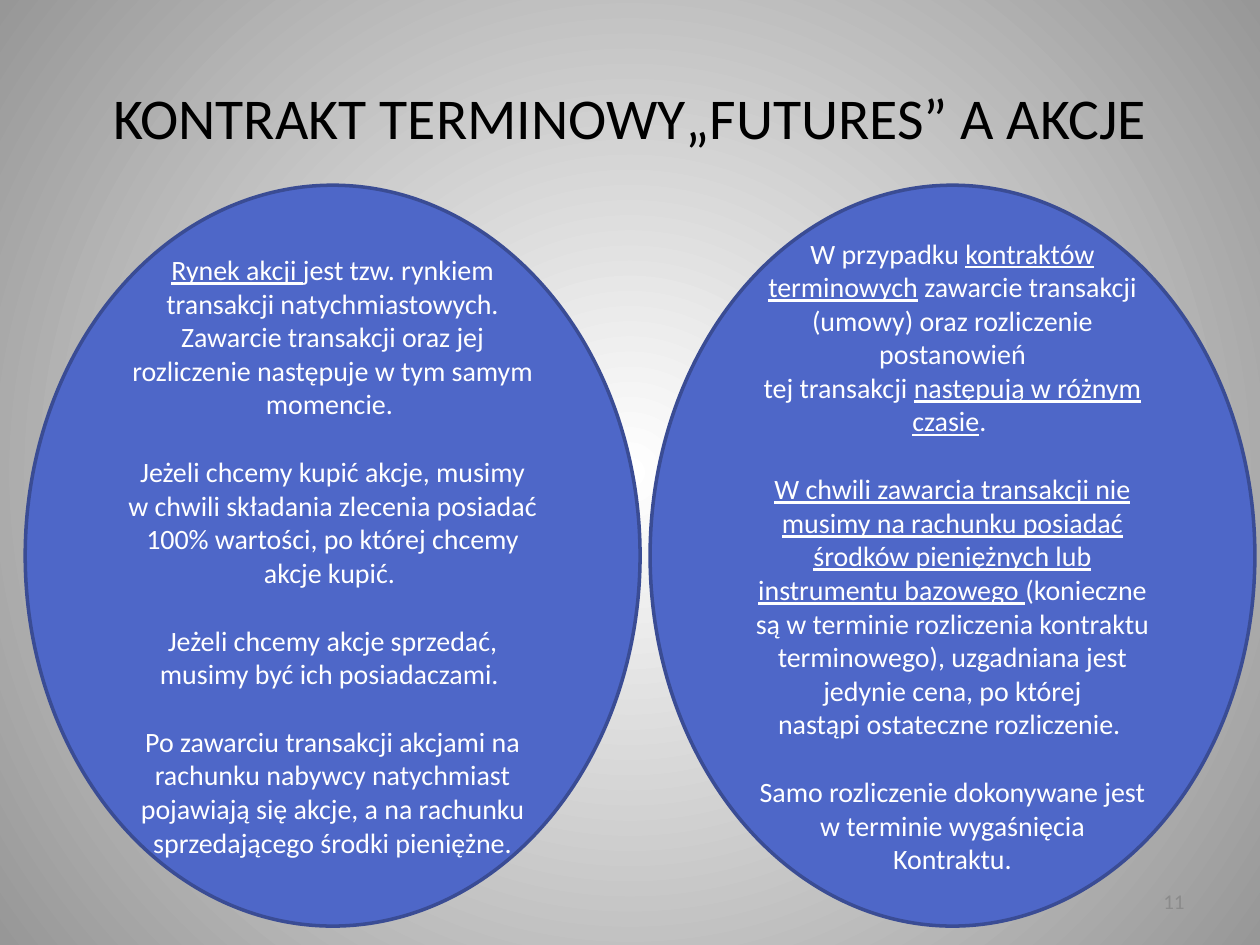
import pptx
import pptx.util
from lxml import etree
from pptx.dml.color import RGBColor
from pptx.enum.shapes import MSO_SHAPE
from pptx.enum.text import MSO_ANCHOR, MSO_AUTO_SIZE, PP_ALIGN
from pptx.oxml.ns import qn
from pptx.util import Inches, Pt

FONT = "Calibri"
BLACK = RGBColor(0x00, 0x00, 0x00)
WHITE = RGBColor(0xFF, 0xFF, 0xFF)
EDGE_GRAY = RGBColor(0x97, 0x97, 0x97)
NUMBER_GRAY = RGBColor(0x8B, 0x8B, 0x8B)
BLUE = RGBColor(0x4E, 0x67, 0xC8)
DARK_BLUE = RGBColor(0x3A, 0x4C, 0x94)
BLOCK_GAP = 19.5  # one line of 16 pt text

TITLE = "KONTRAKT TERMINOWY„FUTURES” A AKCJE"
NUMBER = "11"

# Blocks of paragraphs; a paragraph is a list of (text, underlined) runs.
STOCKS = [
    [[("Rynek akcji ", True),
      ("jest tzw. rynkiem transakcji natychmiastowych. Zawarcie transakcji oraz jej "
       "rozliczenie następuje w tym samym momencie. ", False)]],
    [[("Jeżeli chcemy kupić akcje, musimy w chwili składania zlecenia posiadać "
       "100% wartości, po której chcemy akcje kupić. ", False)]],
    [[("Jeżeli chcemy akcje sprzedać, musimy być ich posiadaczami. ", False)]],
    [[("Po zawarciu transakcji akcjami na rachunku nabywcy natychmiast pojawiają się "
       "akcje, a na rachunku sprzedającego środki pieniężne.", False)]],
]
FUTURES = [
    [[("W przypadku ", False), ("kontraktów terminowych", True),
      (" zawarcie transakcji (umowy) oraz rozliczenie postanowień", False)],
     [("tej transakcji ", False), ("następują w różnym czasie", True), (". ", False)]],
    [[("W chwili zawarcia transakcji nie musimy na rachunku posiadać środków "
       "pieniężnych lub instrumentu bazowego ", True), ("(konieczne", False)],
     [("są w terminie rozliczenia kontraktu terminowego), uzgadniana jest jedynie "
       "cena, po której", False)],
     [("nastąpi ostateczne rozliczenie. ", False)]],
    [[("Samo rozliczenie dokonywane jest w terminie wygaśnięcia", False)],
     [("Kontraktu.", False)]],
]
OVALS = [(0.2, 4.88, STOCKS), (5.16, 4.8, FUTURES)]  # left, width, blocks
OVAL_TOP, OVAL_HEIGHT = 1.47, 5.88


def style(p, size, color, align):
    p.alignment = align
    p.font.name = FONT
    p.font.size = Pt(size)
    p.font.color.rgb = color


def set_background(s):
    """Radial gradient, white in the middle of the slide."""
    fill = s.background.fill
    fill.gradient()
    for stop, color, position in zip(fill.gradient_stops, (WHITE, EDGE_GRAY), (0, 1)):
        stop.color.rgb = color
        stop.position = position
    grad = s.background._cSld.find(".//" + qn("a:gradFill"))
    grad.remove(grad.find(qn("a:lin")))
    radial = etree.SubElement(grad, qn("a:path"), path="circle")
    etree.SubElement(radial, qn("a:fillToRect"),
                     {side: "50000" for side in "ltrb"})


def add_oval(s, left, width, blocks):
    sp = s.shapes.add_shape(MSO_SHAPE.OVAL, Inches(left), Inches(OVAL_TOP),
                            Inches(width), Inches(OVAL_HEIGHT))
    sp.shadow.inherit = False
    sp.fill.solid()
    sp.fill.fore_color.rgb = BLUE
    sp.line.color.rgb = DARK_BLUE
    sp.line.width = Pt(2)
    tf = sp.text_frame
    tf.word_wrap = True
    tf.vertical_anchor = MSO_ANCHOR.MIDDLE
    p = tf.paragraphs[0]
    for b, block in enumerate(blocks):
        for i, runs in enumerate(block):
            if b or i:
                p = tf.add_paragraph()
            style(p, 16, WHITE, PP_ALIGN.CENTER)
            if b and not i:
                p.space_before = Pt(BLOCK_GAP)
            for text, underlined in runs:
                r = p.add_run()
                r.text = text
                if underlined:
                    r.font.underline = True


def main():
    prs = pptx.Presentation()
    prs.slide_width, prs.slide_height = Inches(10), Inches(7.5)
    s = prs.slides.add_slide(prs.slide_layouts[5])
    set_background(s)

    title = s.shapes.title
    title.left, title.top = Inches(0.5), Inches(0.3)
    title.width, title.height = Inches(9), Inches(1.25)
    tf = title.text_frame
    tf.text = TITLE
    tf.auto_size = MSO_AUTO_SIZE.NONE
    tf.vertical_anchor = MSO_ANCHOR.MIDDLE
    style(tf.paragraphs[0], 33, BLACK, PP_ALIGN.CENTER)

    for left, width, blocks in OVALS:
        add_oval(s, left, width, blocks)

    number = s.shapes.add_textbox(Inches(8.5), Inches(6.95), Inches(1), Inches(0.4))
    tf = number.text_frame
    tf.word_wrap = True
    tf.vertical_anchor = MSO_ANCHOR.MIDDLE
    tf.text = NUMBER
    style(tf.paragraphs[0], 12, NUMBER_GRAY, PP_ALIGN.RIGHT)

    prs.save("out.pptx")


if __name__ == "__main__":
    main()
